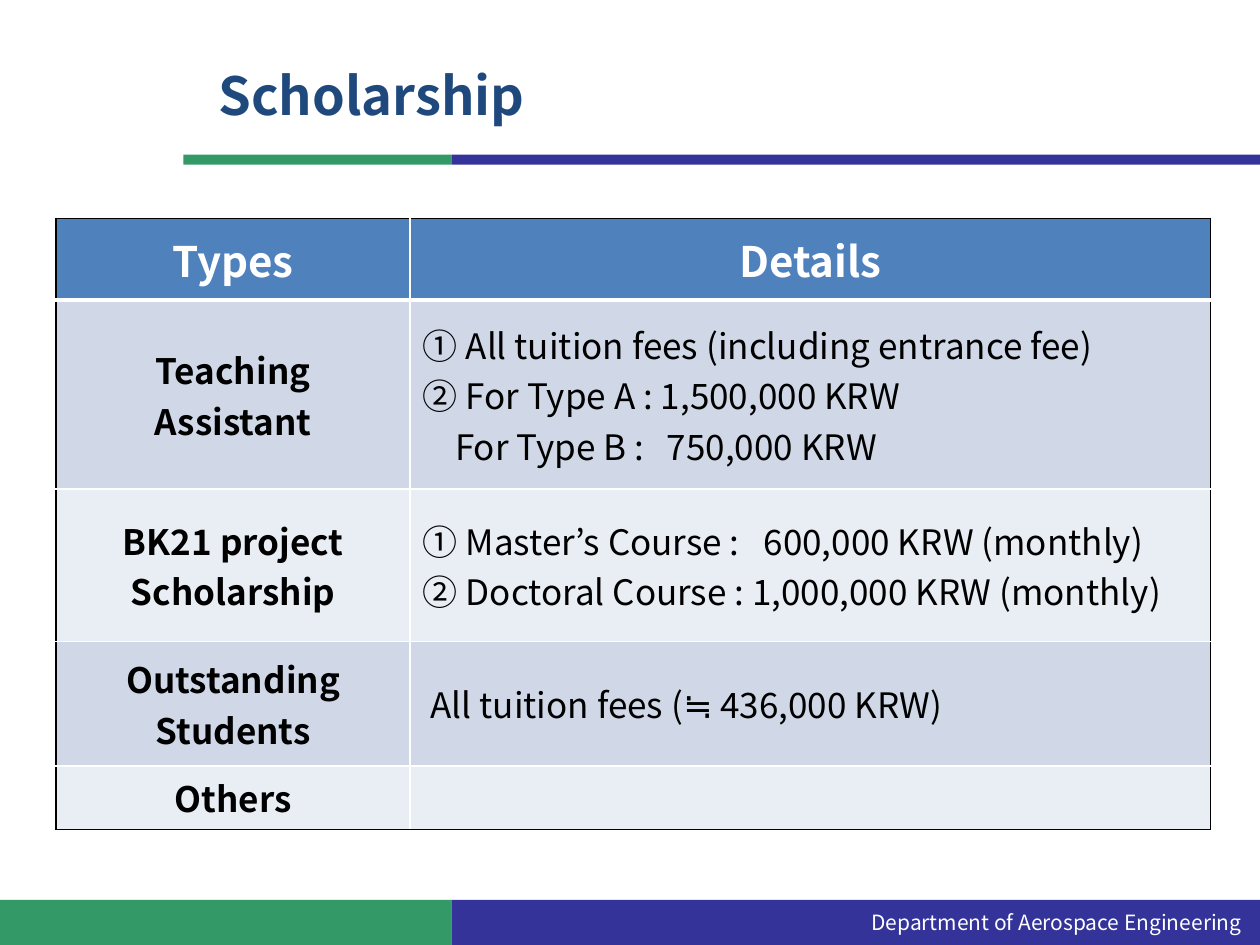
"""Build the scholarship slide of the aerospace department."""
from lxml import etree
from pptx import Presentation
from pptx import util as u
from pptx.dml.color import RGBColor
from pptx.enum import shapes, text
from pptx.oxml.ns import qn

FONT = "Noto Sans CJK KR"
GREEN, INDIGO, WHITE, BLACK = "339966", "333399", "FFFFFF", "000000"
HEADER_FILL, BAND_FILLS = "4F81BD", ("D0D8E8", "E9EDF4")
TITLE = "Scholarship"
FOOTER = "Department of Aerospace Engineering"
HEADERS = ("Types", "Details")
ROWS = [
    (["Teaching", "Assistant"],
     ["① All tuition fees (including entrance fee)",
      "② For Type A : 1,500,000 KRW",
      "\tFor Type B :\t750,000 KRW"]),
    (["BK21 project Scholarship"],
     ["① Master’s Course :\t600,000 KRW (monthly)",
      "② Doctoral Course : 1,000,000 KRW (monthly)"]),
    (["Outstanding Students"], [" All tuition fees (≒ 436,000 KRW)"]),
    (["Others"], []),
]
TAB_STOPS = {"\tFor": (0.65, 4.92), "① Master’s": (6.87,)}
COLUMN_WIDTHS = (7.14, 16.13)
ROW_HEIGHTS = (1.65, 3.81, 3.07, 2.51, 1.19)
SLIDE_WIDTH, SLIDE_HEIGHT = 25.4, 19.05
SPLIT, RULE_LEFT, RULE_TOP, FOOTER_TOP = 9.1, 3.7, 3.12, 18.14
BARS = [
    (SPLIT, FOOTER_TOP, SLIDE_WIDTH, SLIDE_HEIGHT, INDIGO),
    (0, FOOTER_TOP, SPLIT, SLIDE_HEIGHT, GREEN),
    (SPLIT, RULE_TOP, SLIDE_WIDTH, RULE_TOP + 0.2, INDIGO),
    (RULE_LEFT, RULE_TOP, SPLIT, RULE_TOP + 0.2, GREEN),
]


def paint(fill, color):
    fill.solid()
    fill.fore_color.rgb = RGBColor.from_string(color)


def format_runs(paragraph, size, color, bold=False, align=text.PP_ALIGN.LEFT):
    paragraph.alignment = align
    for run in paragraph.runs:
        run.font.size, run.font.bold, run.font.name = u.Pt(size), bold, FONT
        paint(run.font.fill, color)
        east_asian = etree.SubElement(run.font._element, qn("a:ea"))
        east_asian.set("typeface", FONT)


def add_bar(slide, left, top, right, bottom, color):
    bar = slide.shapes.add_shape(
        shapes.MSO_SHAPE.RECTANGLE,
        u.Cm(left), u.Cm(top), u.Cm(right - left), u.Cm(bottom - top))
    bar.shadow.inherit = False
    paint(bar.fill, color)
    bar.line.fill.background()
    return bar


def add_tabs(paragraph, stops):
    tabs = etree.SubElement(paragraph._p.get_or_add_pPr(), qn("a:tabLst"))
    for stop in stops:
        etree.SubElement(tabs, qn("a:tab"), pos=str(u.Cm(stop)), algn="l")


def set_borders(cell, borders):
    for side, (color, width) in borders.items():
        line = etree.SubElement(cell._tc.get_or_add_tcPr(), qn("a:ln" + side))
        line.set("w", str(u.Pt(width)))
        fill = etree.SubElement(line, qn("a:solidFill"))
        etree.SubElement(fill, qn("a:srgbClr"), val=color)


def fill_cell(cell, lines, size, color, bold, align):
    cell.vertical_anchor = text.MSO_ANCHOR.MIDDLE
    frame = cell.text_frame
    for index, line in enumerate(lines):
        paragraph = frame.add_paragraph() if index else frame.paragraphs[0]
        paragraph.text = line
        for start, stops in TAB_STOPS.items():
            if line.startswith(start):
                add_tabs(paragraph, stops)
        format_runs(paragraph, size, color, bold, align)


def add_scholarship_table(slide):
    rows = [tuple([header] for header in HEADERS)] + ROWS
    table = slide.shapes.add_table(
        len(rows), len(HEADERS), u.Cm(1.13), u.Cm(4.4),
        u.Cm(sum(COLUMN_WIDTHS)), u.Cm(sum(ROW_HEIGHTS))).table
    for column, width in zip(table.columns, COLUMN_WIDTHS):
        column.width = u.Cm(width)
    for row, height in zip(table.rows, ROW_HEIGHTS):
        row.height = u.Cm(height)
    outer, inner, thick = (BLACK, 1), (WHITE, 1), (WHITE, 3)
    last = len(rows) - 1
    for r, row in enumerate(rows):
        for c, lines in enumerate(row):
            cell = table.cell(r, c)
            set_borders(cell, {
                "L": inner if c else outer,
                "R": outer if c else inner,
                "T": outer if r == 0 else thick if r == 1 else inner,
                "B": thick if r == 0 else outer if r == last else inner,
            })
            paint(cell.fill, BAND_FILLS[(r - 1) % 2] if r else HEADER_FILL)
            heading = r == 0 or c == 0
            fill_cell(cell, lines, 20 if r else 24, BLACK if r else WHITE, heading,
                      text.PP_ALIGN.CENTER if heading else text.PP_ALIGN.LEFT)


def main():
    presentation = Presentation()
    presentation.slide_width = u.Cm(SLIDE_WIDTH)
    presentation.slide_height = u.Cm(SLIDE_HEIGHT)
    slide = presentation.slides.add_slide(presentation.slide_layouts[5])

    footer = [add_bar(slide, *bar) for bar in BARS][0].text_frame
    footer.text = FOOTER
    footer.word_wrap = False
    footer.margin_right = u.Cm(0.36)
    footer.vertical_anchor = text.MSO_ANCHOR.MIDDLE
    format_runs(footer.paragraphs[0], 12, WHITE, align=text.PP_ALIGN.RIGHT)

    title = slide.shapes.title
    title.left, title.top = u.Cm(RULE_LEFT), u.Cm(0.71)
    title.width, title.height = u.Cm(SLIDE_WIDTH - RULE_LEFT), u.Cm(2.41)
    title.text_frame.text = TITLE
    title.text_frame.margin_left = u.Cm(0.7)
    title.text_frame.vertical_anchor = text.MSO_ANCHOR.MIDDLE
    format_runs(title.text_frame.paragraphs[0], 30, "1F497D", bold=True)

    add_scholarship_table(slide)
    presentation.save("out.pptx")


if __name__ == "__main__":
    main()
